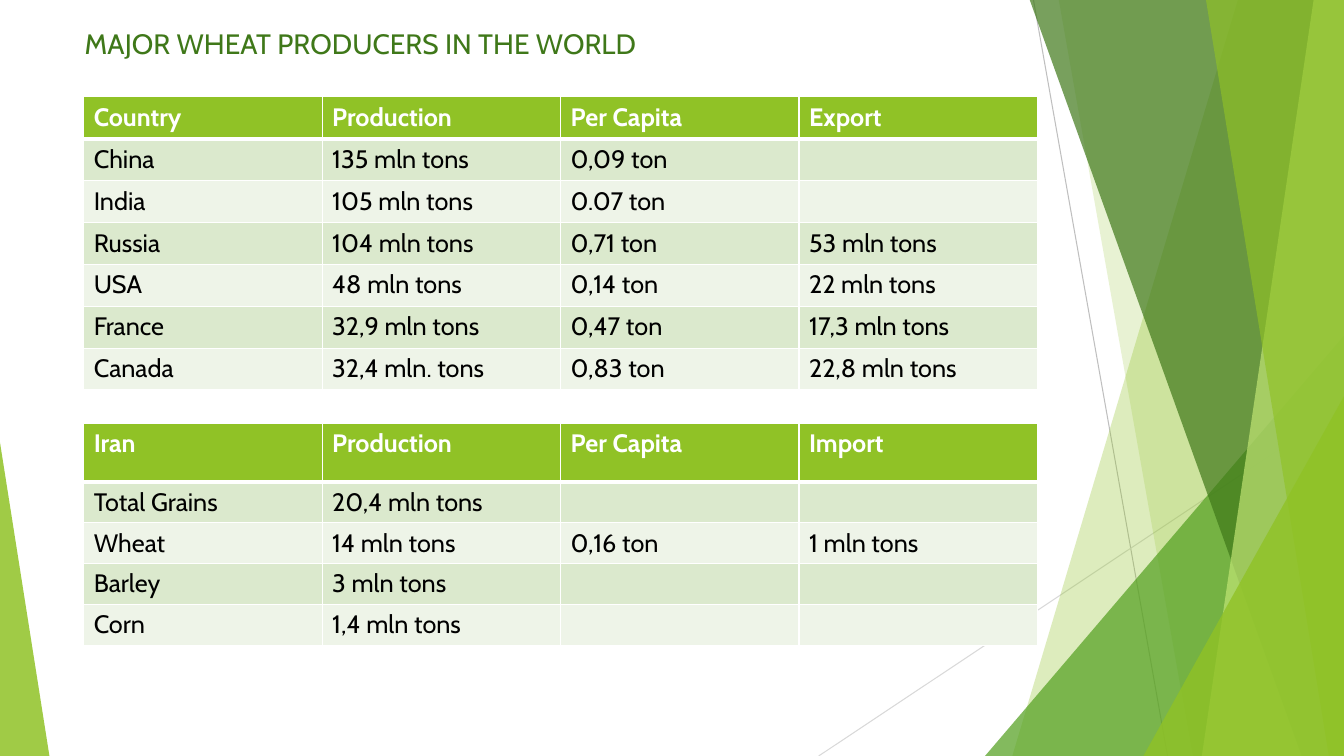
import pptx
import pptx.util
import pptx.dml.color
import pptx.enum.shapes
import pptx.enum.text
import pptx.oxml.ns
from lxml import etree

PX = 9144  # EMU per px, 100 px to the inch
THEME = {
    "font": "Cabin", "title_size": 20, "table_size": 18,
    "lime": "90C226", "green": "54A021", "dark": "3F7819", "pale": "C0E474",
    "odd_row": "DBE9CD", "even_row": "EEF4E8",
    "white": "FFFFFF", "black": "000000", "line": "BFBFBF", "light_line": "D9D9D9",
}
qn = pptx.oxml.ns.qn


def color(name):
    return pptx.dml.color.RGBColor.from_string(THEME[name])


def add_run(p, text, size, name, bold=False):
    r = p.add_run()
    r.text = text
    r.font.name = THEME["font"]
    r.font.size = pptx.util.Pt(THEME[size])
    r.font.bold = bold
    r.font.color.rgb = color(name)


prs = pptx.Presentation()
prs.slide_width, prs.slide_height = 1333 * PX, 750 * PX
s = prs.slides.add_slide(prs.slide_layouts[5])

# Decoration: thin lines
decor = s.shapes.add_group_shape()
for x1, y1, x2, y2, name in [(1025, 0, 1158, 750, "line"),
                             (1333, 403, 812, 750, "light_line")]:
    line = decor.shapes.add_connector(pptx.enum.shapes.MSO_CONNECTOR.STRAIGHT,
                                      x1 * PX, y1 * PX, x2 * PX, y2 * PX)
    line.line.color.rgb = color(name)
    line.line.width = pptx.util.Pt(0.75)
    etree.SubElement(line._element.spPr, qn("a:effectLst"))

# Decoration: translucent facets, from back to front
# A band is (top x, bottom x) and runs to the right edge;
# a triangle is (left, top, width, height, apex position).
facets = [
    ((1228, 1004), "lime", 30),
    ((1050, 1183), "lime", 20),
    ((977, 333, 356, 417, 1), "green", 72),
    ((1021, 1291), "dark", 70),
    ((1303, 1192), "pale", 70),
    ((1196, 1318), "lime", 65),
    ((1134, 393, 199, 357, 1), "lime", 80),
    ((0, 439, 49, 311, 0), "lime", 85),
]
for geometry, name, opacity in facets:
    if len(geometry) == 2:
        top_x, bottom_x = geometry
        outline = decor.shapes.build_freeform(top_x, -1, scale=PX)
        outline.add_line_segments([(1333, -1), (1333, 750), (bottom_x, 750)], close=True)
        sp = outline.convert_to_shape()
    else:
        x, y, w, h, apex = geometry
        sp = decor.shapes.add_shape(pptx.enum.shapes.MSO_SHAPE.ISOSCELES_TRIANGLE,
                                    x * PX, y * PX, w * PX, h * PX)
        sp.adjustments[0] = apex
    sp.shadow.inherit = False
    sp.line.fill.background()
    sp.fill.solid()
    sp.fill.fore_color.rgb = color(name)
    rgb = sp._element.spPr.find(qn("a:solidFill")).find(qn("a:srgbClr"))
    etree.SubElement(rgb, qn("a:alpha")).set("val", str(opacity * 1000))

# Title
title = s.shapes.title
title.left, title.top, title.width, title.height = 74 * PX, 21 * PX, 940 * PX, 63 * PX
tf = title.text_frame
tf.word_wrap = True
tf.auto_size = pptx.enum.text.MSO_AUTO_SIZE.NONE
tf.vertical_anchor = pptx.enum.text.MSO_ANCHOR.TOP
p = tf.paragraphs[0]
p.alignment = pptx.enum.text.PP_ALIGN.LEFT
add_run(p, "MAJOR WHEAT PRODUCERS IN THE WORLD", "title_size", "dark")

# Tables: top, header height, height of all body rows, rows
producers = [
    ["Country", "Production", "Per Capita", "Export"],
    ["China", "135 mln tons", "0,09 ton", ""],
    ["India", "105 mln tons", "0.07 ton", ""],
    ["Russia", "104 mln tons", "0,71 ton", "53 mln tons"],
    ["USA", "48 mln tons", "0,14 ton", "22 mln tons"],
    ["France", "32,9 mln tons", "0,47 ton", "17,3 mln tons"],
    ["Canada", "32,4 mln. tons", "0,83 ton", "22,8 mln tons"],
]
iran = [
    ["Iran", "Production", "Per Capita", "Import"],
    ["Total Grains", "20,4 mln tons", "", ""],
    ["Wheat", "14 mln tons", "0,16 ton", "1 mln tons"],
    ["Barley", "3 mln tons", "", ""],
    ["Corn", "1,4 mln tons", "", ""],
]
for top, header, body, rows in [(96, 42, 249, producers), (420, 58, 162, iran)]:
    frame = s.shapes.add_table(len(rows), 4, 83 * PX, top * PX,
                               946 * PX, (header + body) * PX)
    table = frame.table
    for i, row in enumerate(rows):
        table.rows[i].height = header * PX if i == 0 else body * PX // (len(rows) - 1)
        for j, text in enumerate(row):
            cell = table.cell(i, j)
            tcPr = cell._tc.get_or_add_tcPr()
            for side in "LRTB":
                thick = (i == 0 and side == "B") or (i == 1 and side == "T")
                ln = etree.SubElement(tcPr, qn("a:ln" + side))
                ln.set("w", str(pptx.util.Pt(3 if thick else 1)))
                fill = etree.SubElement(ln, qn("a:solidFill"))
                etree.SubElement(fill, qn("a:srgbClr")).set("val", THEME["white"])
            cell.fill.solid()
            band = "lime" if i == 0 else "odd_row" if i % 2 else "even_row"
            cell.fill.fore_color.rgb = color(band)
            if text:
                add_run(cell.text_frame.paragraphs[0], text, "table_size",
                        "white" if i == 0 else "black", bold=i == 0)

prs.save("out.pptx")
